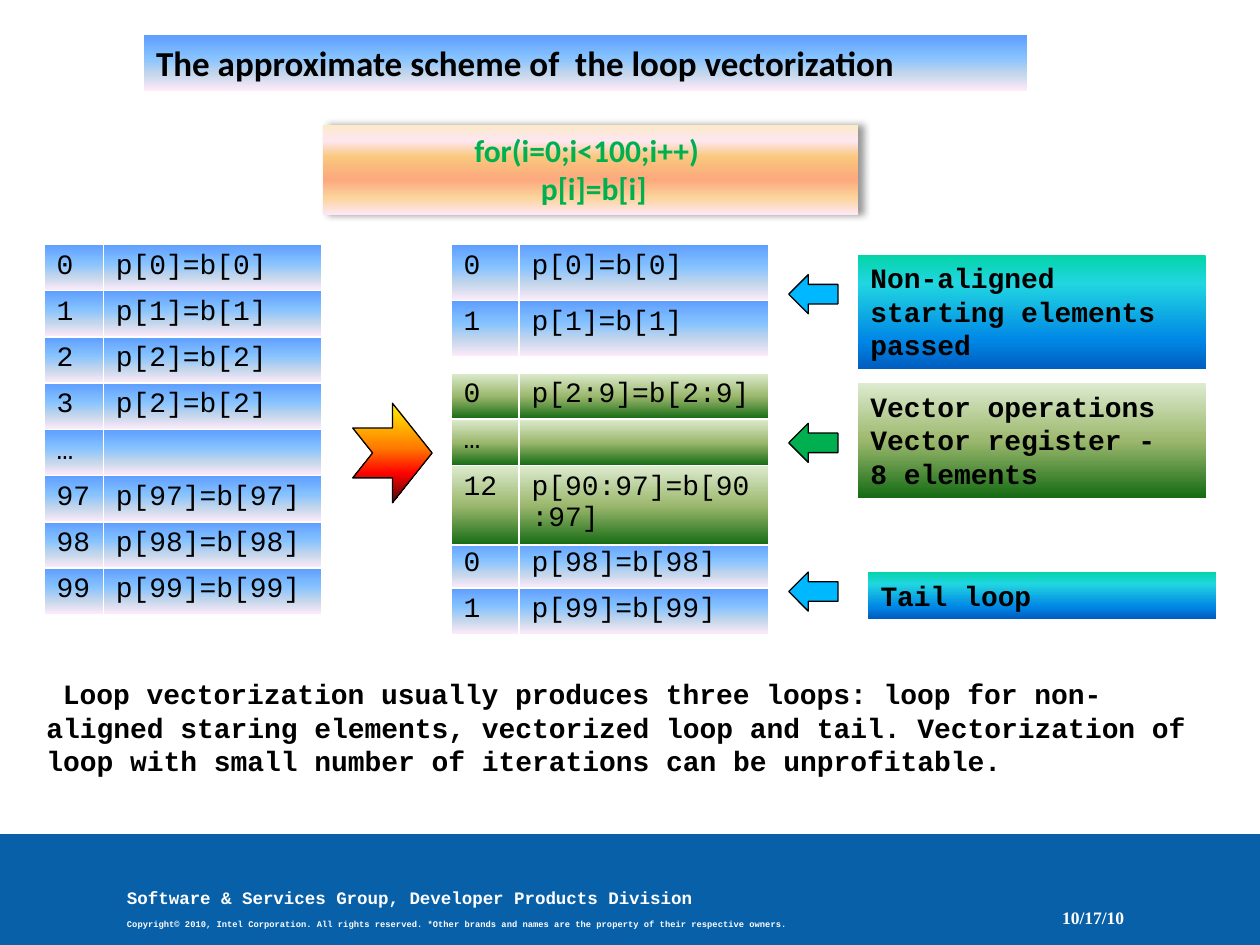
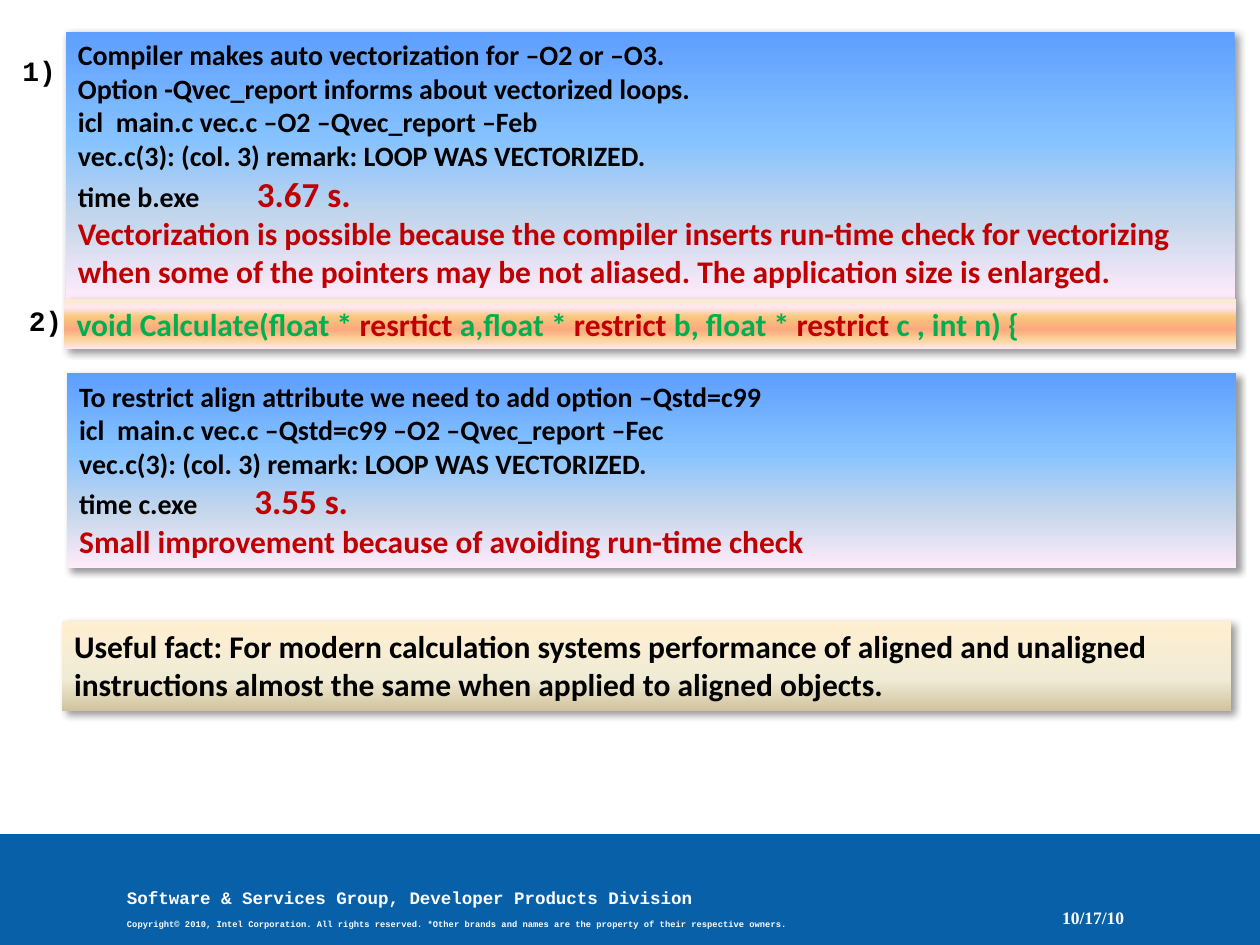
from dataclasses import dataclass

import lxml.etree
import pptx
import pptx.dml.color
import pptx.enum.shapes
import pptx.enum.text
import pptx.oxml.ns
import pptx.slide
import pptx.text.text
import pptx.util

Inches = pptx.util.Inches
Pt = pptx.util.Pt
qn = pptx.oxml.ns.qn
MSO_SHAPE = pptx.enum.shapes.MSO_SHAPE
PP_ALIGN = pptx.enum.text.PP_ALIGN
MSO_ANCHOR = pptx.enum.text.MSO_ANCHOR

BLACK, WHITE = "000000", "FFFFFF"
GREEN, RED, CYAN, FOOTER_BLUE = "00B050", "C00000", "00B8FF", "0860A8"
SANS, MONO, SERIF = "Calibri", "Courier New", "Times New Roman"

# Each gradient runs from top to bottom as (percent, colour) stops.
Gradient = tuple[tuple[int, str], ...]
SKY: Gradient = ((0, "5E9EFF"), (40, "85C2FF"), (70, "C4D6EB"), (100, "FFEBFA"))
PEACH: Gradient = ((0, "FBEAC7"), (18, "FEE7F2"), (36, "FAC77D"),
                   (61, "FBA97D"), (82, "FBD49C"), (100, "FEE7F2"))
MOSS: Gradient = ((0, "DDEBCF"), (50, "9CB86E"), (100, "156B13"))
OCEAN: Gradient = ((0, "03D4A8"), (25, "21D6E0"), (75, "0087E6"), (100, "005CBF"))
FIRE: Gradient = ((0, "FFF200"), (45, "FF7A00"), (70, "FF0300"), (100, "4D0808"))
SAND: Gradient = ((0, "FFEFD1"), (65, "F0EBD5"), (100, "D1C39F"))


@dataclass(frozen=True)
class Area:
    left: float
    top: float
    width: float
    height: float

    def lengths(self) -> tuple:
        return tuple(Inches(v) for v in (self.left, self.top, self.width, self.height))


@dataclass(frozen=True)
class Span:
    text: str
    size: float = 16
    color: str = BLACK
    font: str = SANS
    bold: bool = True


@dataclass(frozen=True)
class Line:
    spans: tuple[Span, ...]
    align: PP_ALIGN = PP_ALIGN.LEFT
    spacing: float = 1.0
    before: float = 0
    tab: float = 0
    indent: float = 0


@dataclass(frozen=True)
class Panel:
    area: Area
    fill: Gradient | str | None
    lines: tuple[Line, ...] = ()
    preset: MSO_SHAPE = MSO_SHAPE.RECTANGLE
    outlined: bool = False
    shadow_angle: int | None = None
    anchor: MSO_ANCHOR = MSO_ANCHOR.TOP


@dataclass(frozen=True)
class LoopTable:
    area: Area
    index_width: float
    fill: Gradient
    rows: tuple[tuple[str, str], ...]


def line(text: str, size: float = 16, color: str = BLACK, font: str = SANS, **layout) -> Line:
    return Line((Span(text, size, color, font),), **layout)


def rgb(color: str) -> pptx.dml.color.RGBColor:
    return pptx.dml.color.RGBColor.from_string(color)


def add_element(parent, tag: str, **attributes):
    return lxml.etree.SubElement(parent, qn(tag), **attributes)


def apply_fill(fill, properties, paint: Gradient | str | None) -> None:
    """Paint a shape or cell; properties is the XML element that holds the fill."""
    if paint is None:
        fill.background()
    elif isinstance(paint, str):
        fill.solid()
        fill.fore_color.rgb = rgb(paint)
    else:
        fill.gradient()
        fill.gradient_angle = 270
        stops = properties.find(qn("a:gradFill")).find(qn("a:gsLst"))
        stops.clear()
        for percent, color in paint:
            stop = add_element(stops, "a:gs", pos=str(percent * 1000))
            add_element(stop, "a:srgbClr", val=color)


def add_shadow(shape, angle: int) -> None:
    effects = shape._element.spPr.find(qn("a:effectLst"))
    shadow = add_element(effects, "a:outerShdw", blurRad=str(Pt(4)), dist=str(Pt(3)),
                         dir=str(angle * 60000), algn="tl", rotWithShape="0")
    color = add_element(shadow, "a:srgbClr", val=BLACK)
    add_element(color, "a:alpha", val="40000")


def write_line(paragraph: pptx.text.text._Paragraph, content: Line) -> None:
    properties = paragraph._p.get_or_add_pPr()
    if content.indent:
        properties.set("indent", str(Inches(content.indent)))
    if content.tab:
        tabs = add_element(properties, "a:tabLst")
        add_element(tabs, "a:tab", pos=str(Inches(content.tab)), algn="l")
    paragraph.alignment = content.align
    if content.spacing != 1:
        paragraph.line_spacing = content.spacing
    if content.before:
        paragraph.space_before = Pt(content.before)
    for span in content.spans:
        run = paragraph.add_run()
        run.text = span.text
        run.font.name = span.font
        run.font.size = Pt(span.size)
        run.font.bold = span.bold
        run.font.color.rgb = rgb(span.color)


def write_lines(text_frame, lines: tuple[Line, ...]) -> None:
    for index, content in enumerate(lines):
        paragraph = text_frame.add_paragraph() if index else text_frame.paragraphs[0]
        write_line(paragraph, content)


def draw_panel(slide: pptx.slide.Slide, panel: Panel) -> None:
    if panel.fill is None:
        shape = slide.shapes.add_textbox(*panel.area.lengths())
    else:
        shape = slide.shapes.add_shape(panel.preset, *panel.area.lengths())
        shape.shadow.inherit = False
        apply_fill(shape.fill, shape._element.spPr, panel.fill)
        if panel.outlined:
            shape.line.color.rgb = rgb(BLACK)
            shape.line.width = Pt(0.75)
        else:
            shape.line.fill.background()
        if panel.shadow_angle is not None:
            add_shadow(shape, panel.shadow_angle)
    shape.text_frame.word_wrap = True
    shape.text_frame.vertical_anchor = panel.anchor
    write_lines(shape.text_frame, panel.lines)


def draw_cell(cell, text: str, paint: Gradient) -> None:
    properties = cell._tc.get_or_add_tcPr()
    for side in ("a:lnL", "a:lnR", "a:lnT", "a:lnB"):
        border = add_element(properties, side, w=str(Pt(1)))
        add_element(add_element(border, "a:solidFill"), "a:srgbClr", val=WHITE)
    apply_fill(cell.fill, properties, paint)
    paragraph = cell.text_frame.paragraphs[0]
    if text:
        write_line(paragraph, Line((Span(text, font=MONO, bold=False),)))
    else:
        add_element(paragraph._p, "a:endParaRPr", sz="1600")


def draw_table(slide: pptx.slide.Slide, content: LoopTable) -> None:
    area = content.area
    table = slide.shapes.add_table(len(content.rows), 2, *area.lengths()).table
    table.first_row = table.horz_banding = False
    table.columns[0].width = Inches(content.index_width)
    table.columns[1].width = Inches(area.width - content.index_width)
    for row, texts in enumerate(content.rows):
        table.rows[row].height = Inches(area.height / len(content.rows))
        for column, text in enumerate(texts):
            draw_cell(table.cell(row, column), text, content.fill)


FOOTER = (
    Panel(Area(0, 6.62, 10, 0.88), FOOTER_BLUE),
    Panel(Area(0.91, 6.96, 5.6, 0.45), None, (
        line("Software & Services Group, Developer Products Division",
             10, WHITE, MONO, spacing=1.2),
        line("Copyright© 2010, Intel Corporation. All rights reserved. "
             "*Other brands and names are the property of their respective owners.",
             5, WHITE, MONO, spacing=1.5, before=3.1),
    )),
    Panel(Area(7.81, 7.1, 1.21, 0.4), None,
          (line("10/17/10", 10, WHITE, SERIF, align=PP_ALIGN.RIGHT, spacing=0.8),),
          anchor=MSO_ANCHOR.MIDDLE),
)


def add_slide(presentation) -> pptx.slide.Slide:
    slide = presentation.slides.add_slide(presentation.slide_layouts[6])
    for panel in FOOTER:
        draw_panel(slide, panel)
    return slide


def assignments(*numbers: int) -> tuple[tuple[str, str], ...]:
    """Rows numbered from 0, each assigning one array element."""
    return tuple((str(row), f"p[{n}]=b[{n}]") for row, n in enumerate(numbers))


def build_scheme_slide(presentation) -> None:
    slide = add_slide(presentation)
    scalar_rows = (
        *assignments(0, 1, 2),
        ("3", "p[2]=b[2]"),
        ("…", ""),
        *((str(n), f"p[{n}]=b[{n}]") for n in (97, 98, 99)),
    )
    vector_rows = (("0", "p[2:9]=b[2:9]"), ("…", ""), ("12", "p[90:97]=b[90:97]"))
    for table in (
        LoopTable(Area(0.35, 1.94, 2.2, 2.93), 0.47, SKY, scalar_rows),
        LoopTable(Area(3.58, 1.94, 2.52, 0.89), 0.54, SKY, assignments(0, 1)),
        LoopTable(Area(3.58, 4.3, 2.52, 0.73), 0.54, SKY, assignments(98, 99)),
        LoopTable(Area(3.58, 2.96, 2.52, 1.1), 0.54, MOSS, vector_rows),
    ):
        draw_table(slide, table)

    panels = [
        Panel(Area(1.14, 0.28, 7.01, 0.44), SKY,
              (line("The approximate scheme of  the loop vectorization", 20),)),
        Panel(Area(2.56, 0.99, 4.25, 0.71), PEACH,
              tuple(line(code, 18, GREEN, align=PP_ALIGN.CENTER)
                    for code in ("for(i=0;i<100;i++) ", " p[i]=b[i]")),
              shadow_angle=0),
        Panel(Area(2.8, 3.2, 0.63, 0.79), FIRE,
              preset=MSO_SHAPE.NOTCHED_RIGHT_ARROW, outlined=True),
        Panel(Area(0.27, 5.32, 9.29, 0.91), None, (
            line("Loop vectorization usually produces three loops: loop for non-aligned "
                 "staring elements, vectorized loop and tail. Vectorization of loop with "
                 "small number of iterations can be unprofitable.", font=MONO, indent=0.13),
        )),
    ]
    notes = (
        (Area(6.81, 2.02, 2.76, 0.91), OCEAN, ("Non-aligned starting elements passed",)),
        (Area(6.81, 3.04, 2.76, 0.91), MOSS,
         ("Vector operations", "Vector register -  8 elements")),
        (Area(6.89, 4.54, 2.76, 0.37), OCEAN, ("Tail loop",)),
    )
    for index, (area, paint, texts) in enumerate(notes):
        panels.append(Panel(area, paint, tuple(line(text, font=MONO) for text in texts)))
        panels.append(Panel(Area(6.26, 2.18 + 1.18 * index, 0.39, 0.31),
                            GREEN if paint is MOSS else CYAN,
                            preset=MSO_SHAPE.LEFT_ARROW, outlined=True))
    for panel in panels:
        draw_panel(slide, panel)


def timing(program: str, seconds: str, tab: float) -> Line:
    return Line((Span(f"time {program}\t"), Span(f"{seconds} s.", 20, RED)), tab=tab)


def build_report_slide(presentation) -> None:
    slide = add_slide(presentation)
    vectorized = line("vec.c(3): (col. 3) remark: LOOP WAS VECTORIZED.")
    signature = (
        ("void Calculate(float * ", GREEN), ("resrtict ", RED), ("a,float * ", GREEN),
        ("restrict", RED), (" b, float * ", GREEN), ("restrict", RED),
        (" c , int n) {", GREEN),
    )
    boxes = (
        (Area(0.52, 0.25, 9.28, 2.12), SKY, (
            line("Compiler makes auto vectorization for –O2 or –O3."),
            line("Option -Qvec_report informs about vectorized loops."),
            line("icl  main.c vec.c –O2 –Qvec_report –Feb"),
            vectorized,
            timing("b.exe", "3.67", 1.42),
            line("Vectorization is possible because the compiler inserts run-time check "
                 "for vectorizing when some of the pointers may be not aliased. "
                 "The application size is enlarged.", 18, RED),
        )),
        (Area(0.51, 2.37, 9.3, 0.4), PEACH,
         (Line(tuple(Span(text, 18, color) for text, color in signature)),)),
        (Area(0.53, 2.96, 9.28, 1.55), SKY, (
            line("To restrict align attribute we need to add option –Qstd=c99"),
            line("icl  main.c vec.c –Qstd=c99 –O2 –Qvec_report –Fec"),
            vectorized,
            timing("c.exe", "3.55", 1.39),
            line("Small improvement because of avoiding run-time check", 18, RED),
        )),
        (Area(0.49, 4.93, 9.28, 0.71), SAND, (
            line("Useful fact: For modern calculation systems performance of aligned and "
                 "unaligned instructions almost the same when applied to aligned objects.", 18),
        )),
    )
    for area, paint, lines in boxes:
        draw_panel(slide, Panel(area, paint, lines, shadow_angle=45))
    for label, left, top in (("1)", 0.08, 0.38), ("2)", 0.13, 2.36)):
        draw_panel(slide, Panel(Area(left, top, 0.59, 0.37), None, (line(label, font=MONO),)))


def main() -> None:
    presentation = pptx.Presentation()
    presentation.slide_width = Inches(10)
    presentation.slide_height = Inches(7.5)
    build_scheme_slide(presentation)
    build_report_slide(presentation)
    presentation.save("out.pptx")


if __name__ == "__main__":
    main()
